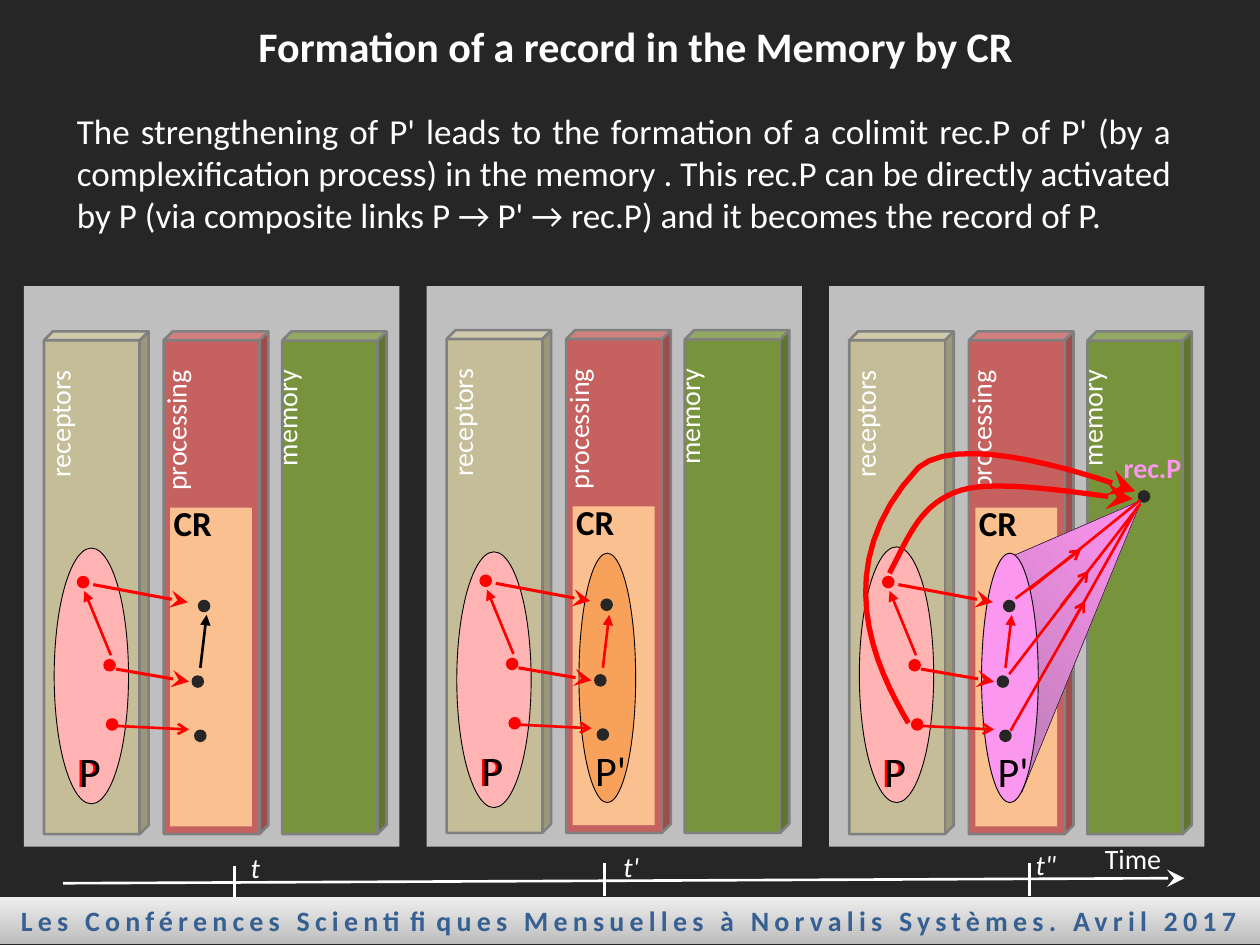
"""Build the slide on how a record forms in the memory."""
from lxml import etree
from pptx import Presentation
from pptx.dml.color import RGBColor
from pptx.enum.shapes import MSO_CONNECTOR, MSO_SHAPE
from pptx.enum.text import MSO_ANCHOR, MSO_AUTO_SIZE, PP_ALIGN
from pptx.oxml.ns import qn
from pptx.util import Inches, Pt

RECT, OVAL, CUBE = MSO_SHAPE.RECTANGLE, MSO_SHAPE.OVAL, MSO_SHAPE.CUBE
STRAIGHT = MSO_CONNECTOR.STRAIGHT
LEFT, CENTER, RIGHT, JUSTIFY = PP_ALIGN.LEFT, PP_ALIGN.CENTER, PP_ALIGN.RIGHT, PP_ALIGN.JUSTIFY
TOP, NO_FIT = MSO_ANCHOR.TOP, MSO_AUTO_SIZE.NONE

DARK = RGBColor(0x26, 0x26, 0x26)
WHITE = RGBColor(0xFF, 0xFF, 0xFF)
BLACK = RGBColor(0, 0, 0)
RED = RGBColor(0xFF, 0, 0)
GREY = RGBColor(0x80, 0x80, 0x80)
PANEL = RGBColor(0xBF, 0xBF, 0xBF)
TAN = RGBColor(0xC4, 0xBD, 0x97)
BRICK = RGBColor(0xC5, 0x61, 0x5F)
GREEN = RGBColor(0x77, 0x93, 0x3C)
PEACH = RGBColor(0xFA, 0xC0, 0x90)
ORANGE = RGBColor(0xF8, 0xA1, 0x5A)
PINK = RGBColor(0xFF, 0xB3, 0xB3)
VIOLET = RGBColor(0xFB, 0x97, 0xEF)
BLUE = RGBColor(0x37, 0x60, 0x92)
BAR_GRADIENT = (RGBColor(0xBD, 0xBD, 0xBD), RGBColor(0xEE, 0xEE, 0xEE))
CONE_GRADIENT = (RGBColor(0xB9, 0x7D, 0xB2), RGBColor(0xFF, 0x93, 0xF2))

PITCH = 3.195
COLUMNS = [("receptors", 0.35, 0.29, TAN, 0.085),
           ("processing", 1.3, 1.21, BRICK, 0.085),
           ("memory", 2.24, 2.09, GREEN, 0.089)]
RED_DOTS = [(0.84, 5.7), (0.82, 5.23), (0.61, 4.57)]
DARK_DOTS = [(1.54, 5.79), (1.52, 5.36), (1.57, 4.76)]
LINKS = [((0.9, 5.76), (1.5, 5.79), 1.5, "arrow", "med"),
         ((0.88, 5.2), (0.67, 4.69), 1.5, "triangle", "med"),
         ((0.74, 4.64), (1.49, 4.78), 1.75, "stealth", "lg"),
         ((0.92, 5.31), (1.5, 5.41), 1.75, "stealth", "lg")]
RAYS = [((8.06, 4.75), (8.58, 4.36), (8.17, 4.68), (9.05, 3.97)),
        ((8.01, 5.35), (8.64, 4.53), (8.42, 4.81), (9.05, 4)),
        ((8.02, 5.8), (8.61, 4.77), (8.45, 5.05), (9.03, 4.02))]
CURVES = [[(7.06, 4.55), (7.22, 4.24), (7.31, 3.99), (7.63, 3.89),
           (7.96, 3.79), (8.76, 3.95), (8.99, 3.96)],
          [(7.21, 5.74), (6.95, 5.3), (6.56, 4.49), (7.29, 3.71),
           (7.68, 3.38), (9.01, 3.9), (9.01, 3.9)]]
TICKS = [(1.86, 6.87), (4.8, 6.85), (8.17, 6.85)]
TIME_LABELS = [("t", 1.89, 6.7, 0.4, True), ("t'", 4.85, 6.69, 0.4, True),
               ('t"', 8.12, 6.68, 0.51, True), ("Time", 8.67, 6.63, 0.81, False)]
BODY = ("The strengthening of P' leads to the formation of a colimit rec.P of P' "
        "(by a complexification process) in the memory . This rec.P can be directly "
        "activated by P (via composite links P → P' → rec.P) and it becomes the record of P.")
FOOTER = "Les Conférences Scientifiques Mensuelles à Norvalis Systèmes. Avril 2017"


def write(sp, text, size, color, align=LEFT, **extra):
    """Write one formatted paragraph into a shape and return its run."""
    p = sp.text_frame.paragraphs[0]
    p.alignment = align
    r = p.add_run()
    r.text = text
    for key, value in {"name": "Calibri", "size": Pt(size), **extra}.items():
        setattr(r.font, key, value)
    r.font.color.rgb = color
    return r


def add_text(s, box, text, size, color, align=LEFT, wrap=True, vert=None, **extra):
    """Add a text box, optionally with rotated text."""
    sp = s.shapes.add_textbox(*map(Inches, box))
    tf = sp.text_frame
    tf.word_wrap = wrap
    if vert:
        tf._txBody.bodyPr.set("vert", vert)
    write(sp, text, size, color, align, **extra)


def fill_placeholder(sp, box, text, size, align, **extra):
    """Move a placeholder and give it one unbulleted paragraph."""
    sp.left, sp.top, sp.width, sp.height = map(Inches, box)
    tf = sp.text_frame
    for key, value in {"word_wrap": True, "auto_size": NO_FIT, "vertical_anchor": TOP}.items():
        setattr(tf, key, value)
    write(sp, text, size, WHITE, align, **extra)
    p = tf.paragraphs[0]
    p.space_before = Pt(0)
    pPr = p._p.get_or_add_pPr()
    pPr.set("marL", "0")
    pPr.set("indent", "0")
    etree.SubElement(pPr, qn("a:buNone"))


def set_line(line, color, width):
    """Set an outline, or remove it when there is no width."""
    if width:
        line.color.rgb = color
        line.width = Pt(width)
    else:
        line.fill.background()


def add_shape(s, kind, box, fill, line=None, width=0):
    """Add a flat preset shape."""
    sp = s.shapes.add_shape(kind, *map(Inches, box))
    sp.shadow.inherit = False
    sp.fill.solid()
    sp.fill.fore_color.rgb = fill
    set_line(sp.line, line, width)
    return sp


def set_gradient(sp, colors, angle):
    """Fill a shape with a two-colour linear gradient."""
    sp.fill.gradient()
    sp.fill.gradient_angle = angle
    for stop, color in zip(sp.fill.gradient_stops, colors):
        stop.color.rgb = color


def add_head(sp, head, size):
    """Put an arrowhead at the end of a line."""
    etree.SubElement(sp.line._get_or_add_ln(), qn("a:tailEnd"), type=head, w=size, len=size)


def add_line(s, start, end, color, width=1.5, head=None, size="med"):
    """Add a straight connector with an optional arrowhead."""
    sp = s.shapes.add_connector(STRAIGHT, *map(Inches, (*start, *end)))
    set_line(sp.line, color, width)
    if head:
        add_head(sp, head, size)
    etree.SubElement(sp._element.spPr, qn("a:effectLst"))


def add_outline(s, points, close, color, width):
    """Add a freeform through the points."""
    pts = [(Inches(x), Inches(y)) for x, y in points]
    fb = s.shapes.build_freeform(*pts[0])
    fb.add_line_segments(pts[1:], close=close)
    sp = fb.convert_to_shape()
    sp.shadow.inherit = False
    set_line(sp.line, color, width)
    return sp


def bezier(controls, steps=16):
    """Return points along a chain of cubic curves."""
    points = [controls[0]]
    for i in range(0, len(controls) - 1, 3):
        quad = controls[i:i + 4]
        for t in (k / steps for k in range(1, steps + 1)):
            weights = ((1 - t) ** 3, 3 * t * (1 - t) ** 2, 3 * t * t * (1 - t), t ** 3)
            points.append(tuple(sum(w * q[a] for w, q in zip(weights, quad)) for a in (0, 1)))
    return points


def add_dots(s, dots, color, dx=0, dy=0):
    """Add small round dots."""
    for x, y in dots:
        add_shape(s, OVAL, (x + dx, y + dy, 0.1, 0.1), color)


def add_panel(s, index, dy, pattern_y, image_fill, arrow_color):
    """Draw one stage: columns, patterns, labels and links."""
    dx = index * PITCH
    add_shape(s, RECT, (0.19 + dx, 2.27, 2.98, 4.45), PANEL)
    for _, x, _, fill, depth in COLUMNS:
        add_shape(s, CUBE, (x + dx, 2.63 + dy, 0.83, 3.99), fill, GREY, 1.5).adjustments[0] = depth
    add_shape(s, RECT, (1.35 + dx, 4.03 + dy, 0.65, 2.53), PEACH)
    if image_fill == VIOLET:
        cone = add_outline(s, [(8.02, 4.42), (9.06, 3.97), (8.11, 6.29)], True, BLACK, 0.25)
        set_gradient(cone, CONE_GRADIENT, 45)
    if image_fill:
        add_shape(s, OVAL, (1.4 + dx, 4.39, 0.45, 1.98), image_fill, BLACK, 0.5)
    add_shape(s, OVAL, (0.43 + dx, pattern_y, 0.59, 2.03), PINK, BLACK, 0.5)
    for name, _, x, _, _ in COLUMNS:
        add_text(s, (x + dx, 2.84 + dy, 0.47, 1.65), name, 16, WHITE, RIGHT, vert="vert270")
    add_text(s, (1.28 + dx, 3.93 + dy, 0.76, 0.44), "CR", 20, BLACK, bold=True)
    for (x1, y1), (x2, y2), width, head, size in LINKS:
        add_line(s, (x1 + dx, y1 + dy), (x2 + dx, y2 + dy), RED, width, head, size)
    for x, color in ((0.51, RED), (0.53, BLACK)):
        add_text(s, (x + dx, 5.87 + dy, 0.49, 0.5), "P", 24, color)
    add_line(s, (1.59 + dx, 5.3), (1.64 + dx, 4.88), arrow_color, head="triangle")
    add_dots(s, RED_DOTS, RED, dx, dy)
    add_dots(s, DARK_DOTS, DARK, dx, dy)
    if image_fill:
        add_text(s, (1.43 + dx, 5.87 + dy, 0.49, 0.5), "P'", 24, BLACK)


def add_record(s):
    """Draw rec.P with the links that reach it."""
    add_dots(s, [(9.03, 3.89)], DARK)
    add_text(s, (8.82, 3.53, 0.67, 0.37), "rec.P", 16, VIOLET, wrap=False, bold=True)
    for controls in CURVES:
        sp = add_outline(s, bezier(controls), False, RED, 3)
        sp.fill.background()
        add_head(sp, "stealth", "lg")
    for start, middle, resume, end in RAYS:
        add_line(s, start, middle, RED, head="arrow")
        add_line(s, resume, end, RED)


def add_timeline(s):
    """Draw the time axis with its ticks and labels."""
    add_line(s, (0.5, 7.01), (9.4, 6.97), WHITE, head="stealth", size="lg")
    for x, y in TICKS:
        add_line(s, (x, y), (x, y + 0.26), WHITE)
    for text, x, y, width, italic in TIME_LABELS:
        add_text(s, (x, y, width, 0.37), text, 16, WHITE, italic=italic)


def add_footer(s):
    """Add the gradient footer bar."""
    sp = add_shape(s, RECT, (0, 7.12, 10, 0.37), PANEL)
    set_gradient(sp, BAR_GRADIENT, 90)
    sp.text_frame.word_wrap = False
    r = write(sp, FOOTER, 16, BLUE, CENTER, bold=True)
    r._r.get_or_add_rPr().set("spc", "300")


def main():
    """Build and save the slide."""
    prs = Presentation()
    prs.slide_width, prs.slide_height = Inches(10), Inches(7.5)
    s = prs.slides.add_slide(prs.slide_layouts[1])
    s.background.fill.solid()
    s.background.fill.fore_color.rgb = DARK
    title, body = s.placeholders
    fill_placeholder(title, (1.05, 0.11, 7.99, 0.5), "Formation of a record in the Memory by CR",
                     24, CENTER, bold=True)
    fill_placeholder(body, (0.51, 0.82, 8.89, 1.11), BODY, 20, JUSTIFY)
    add_panel(s, 0, 0, 4.35, None, BLACK)
    add_panel(s, 1, -0.01, 4.38, ORANGE, RED)
    add_panel(s, 2, 0, 4.34, VIOLET, RED)
    add_record(s)
    add_timeline(s)
    add_footer(s)
    prs.save("out.pptx")


if __name__ == "__main__":
    main()
